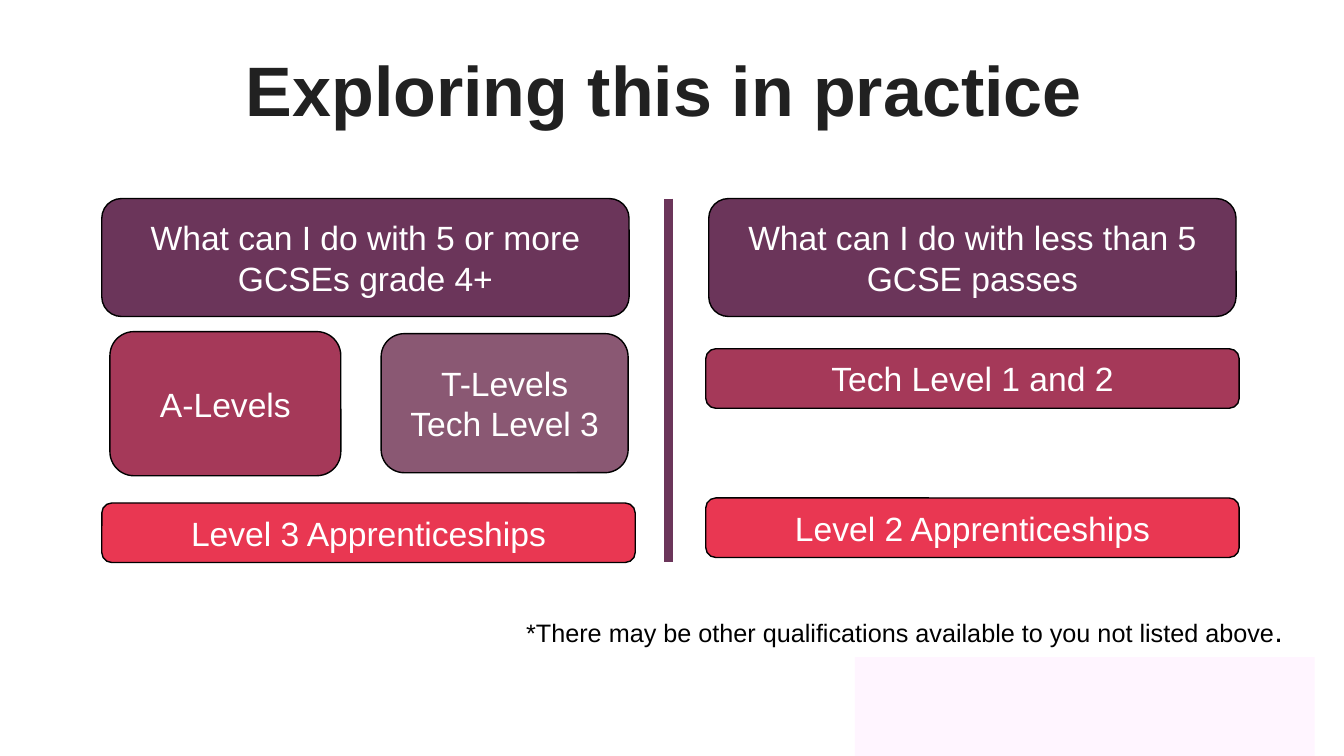
import pptx
import pptx.util
import pptx.dml.color
import pptx.enum.shapes
import pptx.enum.text
from lxml import etree

Inches, Pt = pptx.util.Inches, pptx.util.Pt
RGBColor = pptx.dml.color.RGBColor
ALIGN, ANCHOR = pptx.enum.text.PP_ALIGN, pptx.enum.text.MSO_ANCHOR
SHAPE = pptx.enum.shapes.MSO_SHAPE

PLUM = RGBColor(0x6B, 0x35, 0x5A)
BERRY = RGBColor(0xA5, 0x39, 0x59)
MAUVE = RGBColor(0x8A, 0x58, 0x73)
RED = RGBColor(0xE9, 0x37, 0x52)
BLUSH = RGBColor(0xFF, 0xF5, 0xFF)
CHARCOAL = RGBColor(0x21, 0x21, 0x21)
BLACK = RGBColor(0, 0, 0)
WHITE = RGBColor(255, 255, 255)

deck = pptx.Presentation()
deck.slide_width, deck.slide_height = Inches(13.33), Inches(7.5)
slide = deck.slides.add_slide(deck.slide_layouts[6])
slide.background.fill.solid()
slide.background.fill.fore_color.rgb = WHITE


def write(holder, text, size=24, color=WHITE, bold=False,
          align=ALIGN.CENTER, anchor=ANCHOR.MIDDLE):
    frame = holder.text_frame
    frame.word_wrap = True
    frame.vertical_anchor = anchor
    frame.text = text
    for paragraph in frame.paragraphs:
        paragraph.alignment = align
        for run in paragraph.runs:
            run.font.name = "Arial"
            run.font.size = Pt(size)
            run.font.bold = bold
            run.font.color.rgb = color
    return frame


def add_block(kind, box, fill):
    block = slide.shapes.add_shape(kind, *map(Inches, box))
    block.shadow.inherit = False
    block.fill.solid()
    block.fill.fore_color.rgb = fill
    return block


# Title
title = slide.shapes.add_textbox(*map(Inches, (0.89, 0.41, 11.4, 0.94)))
write(title, "Exploring this in practice", size=50, color=CHARCOAL, bold=True,
      anchor=ANCHOR.TOP)

# Two columns: question on top, routes below
LEFT, RIGHT = 1.01, 7.0
QUESTION_TOP, QUESTION_SIZE = 1.97, (5.23, 1.17)
BAR_SIZE = (5.29, 0.59)
routes = [
    ("What can I do with 5 or more GCSEs grade 4+", PLUM,
     (LEFT, QUESTION_TOP, *QUESTION_SIZE)),
    ("What can I do with less than 5 GCSE passes", PLUM,
     (RIGHT + 0.03, QUESTION_TOP, *QUESTION_SIZE)),
    ("A-Levels", BERRY, (1.09, 3.29, 2.29, 1.43)),
    ("T-Levels\nTech Level 3", MAUVE, (3.78, 3.31, 2.45, 1.38)),
    ("Level 3 Apprenticeships", RED, (LEFT, 4.99, *BAR_SIZE)),
    ("Tech Level 1 and 2", BERRY, (RIGHT, 3.46, *BAR_SIZE)),
    ("Level 2 Apprenticeships", RED, (RIGHT, 4.94, *BAR_SIZE)),
]
for label, fill, box in routes:
    route = add_block(SHAPE.ROUNDED_RECTANGLE, box, fill)
    route.line.color.rgb = BLACK
    route.line.width = Pt(1)
    write(route, label)

# Footnote, ending in a larger full stop
footnote = slide.shapes.add_textbox(*map(Inches, (5.12, 6.06, 7.91, 0.46)))
note = write(
    footnote,
    "*There may be other qualifications available to you not listed above",
    size=18, color=BLACK, align=ALIGN.LEFT, anchor=ANCHOR.TOP).paragraphs[0]
note.line_spacing = 0.9
full_stop = note.add_run()
full_stop.text = "."
full_stop.font.name = "Arial"
full_stop.font.size = Pt(22)
full_stop.font.color.rgb = BLACK

# Divider between the columns
divider = slide.shapes.add_connector(
    pptx.enum.shapes.MSO_CONNECTOR.STRAIGHT,
    *map(Inches, (6.63, QUESTION_TOP, 6.63, 5.58)))
divider.line.color.rgb = PLUM
divider.line.width = Pt(6)
etree.SubElement(divider._element.spPr, pptx.oxml.ns.qn("a:effectLst"))

# Pale panel in the bottom corner
panel = add_block(SHAPE.RECTANGLE, (8.48, 6.52, 4.56, 0.98), BLUSH)
panel.line.fill.background()

deck.save("out.pptx")
